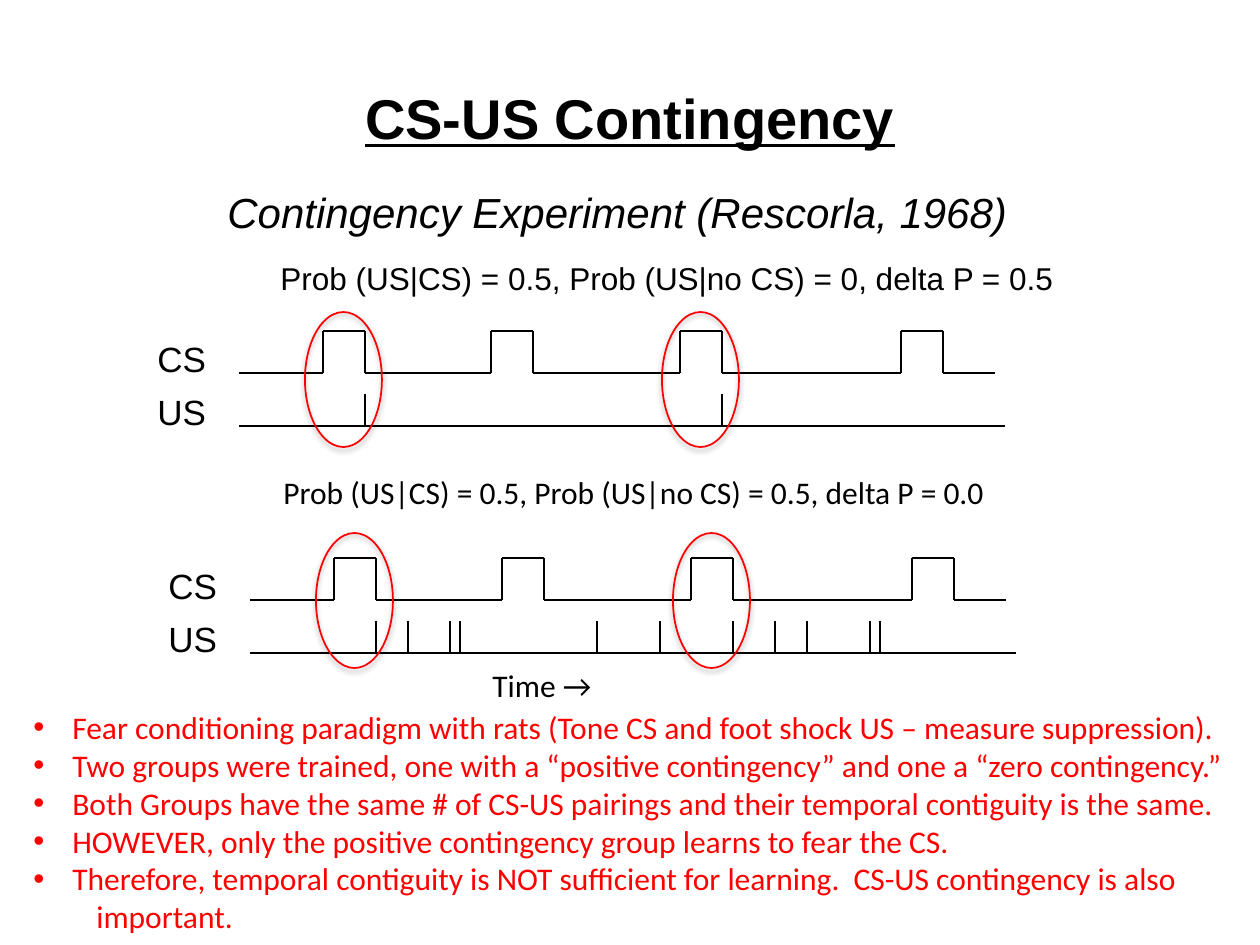
from dataclasses import dataclass

import pptx
import pptx.dml.color
import pptx.enum.shapes
import pptx.enum.text
import pptx.oxml
import pptx.oxml.ns
import pptx.util

PX = 914400 / 126
COLORS = {"ink": "000000", "accent": "FF0000"}
NS = pptx.oxml.ns.nsdecls("a")

PULSE_STARTS = (84, 252, 441, 662)
PULSE_SIZE = 42
CS_LENGTH = 756
US_LENGTH = 766
US_BASE = 95
TICK_HEIGHT = 32
PAIRING_OFFSETS = (66, 423)
INDENT = 39


@dataclass(frozen=True)
class Panel:
    left: int
    top: int
    ring_top: int
    us_ticks: tuple[int, ...]


@dataclass(frozen=True)
class Label:
    text: str
    left: int
    top: int
    width: int
    height: int
    size: int
    font: str = "Arial"
    italic: bool = False


PANELS = (
    Panel(239, 331, 312, (126, 483)),
    Panel(250, 558, 533,
          (126, 158, 200, 210, 347, 410, 483, 525, 557, 620, 630)),
)
LABELS = (
    Label("Contingency Experiment (Rescorla, 1968)", 215, 180, 805, 63, 24, italic=True),
    Label("Prob (US|CS) = 0.5, Prob (US|no CS) = 0, delta P = 0.5", 268, 253, 799, 50, 18),
    Label("Prob (US|CS) = 0.5, Prob (US|no CS) = 0.5, delta P = 0.0",
          271, 467, 825, 50, 18, "Calibri"),
    Label("Time →", 480, 660, 127, 50, 18, "Calibri"),
)
FINDINGS = (
    "Fear conditioning paradigm with rats (Tone CS and foot shock US – measure suppression).",
    "Two groups were trained, one with a “positive contingency” and one a “zero contingency.”",
    "Both Groups have the same # of CS-US pairings and their temporal contiguity is the same.",
    "HOWEVER, only the positive contingency group learns to fear the CS.",
    "Therefore, temporal contiguity is NOT sufficient for learning.  CS-US contingency is also",
)


def px(value: int) -> int:
    return round(value * PX)


def rgb(name: str) -> pptx.dml.color.RGBColor:
    return pptx.dml.color.RGBColor.from_string(COLORS[name])


def add_box(s, left: int, top: int, width: int, height: int, wrap: bool = True):
    sp = s.shapes.add_textbox(px(left), px(top), px(width), px(height))
    tf = sp.text_frame
    tf.word_wrap = wrap
    return tf


def add_run(p, text: str, size: int, font: str, color: str = "ink"):
    r = p.add_run()
    r.text = text
    r.font.size = pptx.util.Pt(size)
    r.font.name = font
    r.font.color.rgb = rgb(color)
    return r


def add_title(s) -> None:
    tf = add_box(s, 63, 38, 1134, 158)
    tf.vertical_anchor = pptx.enum.text.MSO_ANCHOR.MIDDLE
    p = tf.paragraphs[0]
    p.alignment = pptx.enum.text.PP_ALIGN.CENTER
    r = add_run(p, "CS-US Contingency", 32, "Arial")
    r.font.bold = True
    r.font.underline = True


def add_label(s, label: Label) -> None:
    tf = add_box(s, label.left, label.top, label.width, label.height, wrap=False)
    tf.auto_size = pptx.enum.text.MSO_AUTO_SIZE.SHAPE_TO_FIT_TEXT
    r = add_run(tf.paragraphs[0], label.text, label.size, label.font)
    r.font.italic = label.italic


def add_line(s, x1: int, y1: int, x2: int, y2: int) -> None:
    line = s.shapes.add_connector(
        pptx.enum.shapes.MSO_CONNECTOR.STRAIGHT, px(x1), px(y1), px(x2), px(y2))
    line.line.color.rgb = rgb("ink")
    line.line.width = pptx.util.Pt(0.75)
    line._element.spPr.append(pptx.oxml.parse_xml(f"<a:effectLst {NS}/>"))


def add_ring(s, left: int, top: int) -> None:
    """Circle one CS-US pairing with a softly shadowed ellipse."""
    sp = s.shapes.add_shape(
        pptx.enum.shapes.MSO_SHAPE.OVAL, px(left), px(top), px(77), px(135))
    sp.fill.background()
    sp.line.color.rgb = rgb("accent")
    sp.line.width = pptx.util.Pt(1)
    sp._element.spPr.append(pptx.oxml.parse_xml(
        f'<a:effectLst {NS}><a:outerShdw blurRad="40000" dist="23000" dir="5400000" '
        f'rotWithShape="0"><a:srgbClr val="{COLORS["ink"]}"><a:alpha val="35000"/>'
        '</a:srgbClr></a:outerShdw></a:effectLst>'))


def add_panel(s, panel: Panel) -> None:
    """Draw the CS pulse train above the US tick train."""
    base = panel.top + PULSE_SIZE
    x = panel.left
    for start in PULSE_STARTS:
        rise = panel.left + start
        fall = rise + PULSE_SIZE
        add_line(s, x, base, rise, base)
        add_line(s, rise, panel.top, rise, base)
        add_line(s, rise, panel.top, fall, panel.top)
        add_line(s, fall, panel.top, fall, base)
        x = fall
    add_line(s, x, base, panel.left + CS_LENGTH, base)

    us_base = panel.top + US_BASE
    add_line(s, panel.left, us_base, panel.left + US_LENGTH, us_base)
    for tick in panel.us_ticks:
        x = panel.left + tick
        add_line(s, x, us_base - TICK_HEIGHT, x, us_base)

    for row, text in enumerate(("CS", "US")):
        add_label(s, Label(text, panel.left - 94, panel.top + 53 * row, 74, 54, 20))


def add_findings(s) -> None:
    tf = add_box(s, 21, 702, 1234, 242)
    p = tf.paragraphs[0]
    for i, text in enumerate(FINDINGS):
        if i:
            p = tf.add_paragraph()
        add_run(p, text, 18, "Calibri", "accent")
        pPr = p._p.get_or_add_pPr()
        pPr.set("marL", str(px(INDENT)))
        pPr.set("indent", str(-px(INDENT)))
        pPr.append(pptx.oxml.parse_xml(f'<a:buFont {NS} typeface="Arial"/>'))
        pPr.append(pptx.oxml.parse_xml(f'<a:buChar {NS} char="•"/>'))
    p = tf.add_paragraph()
    p._p.get_or_add_pPr().set("marL", str(px(63)))
    add_run(p, "important.", 18, "Calibri", "accent")


def main() -> None:
    prs = pptx.Presentation()
    prs.slide_width, prs.slide_height = px(1260), px(945)
    s = prs.slides.add_slide(prs.slide_layouts[6])
    add_title(s)
    for panel in PANELS:
        add_panel(s, panel)
    for label in LABELS:
        add_label(s, label)
    for panel in PANELS:
        for offset in PAIRING_OFFSETS:
            add_ring(s, panel.left + offset, panel.ring_top)
    add_findings(s)
    prs.save("out.pptx")


if __name__ == "__main__":
    main()
